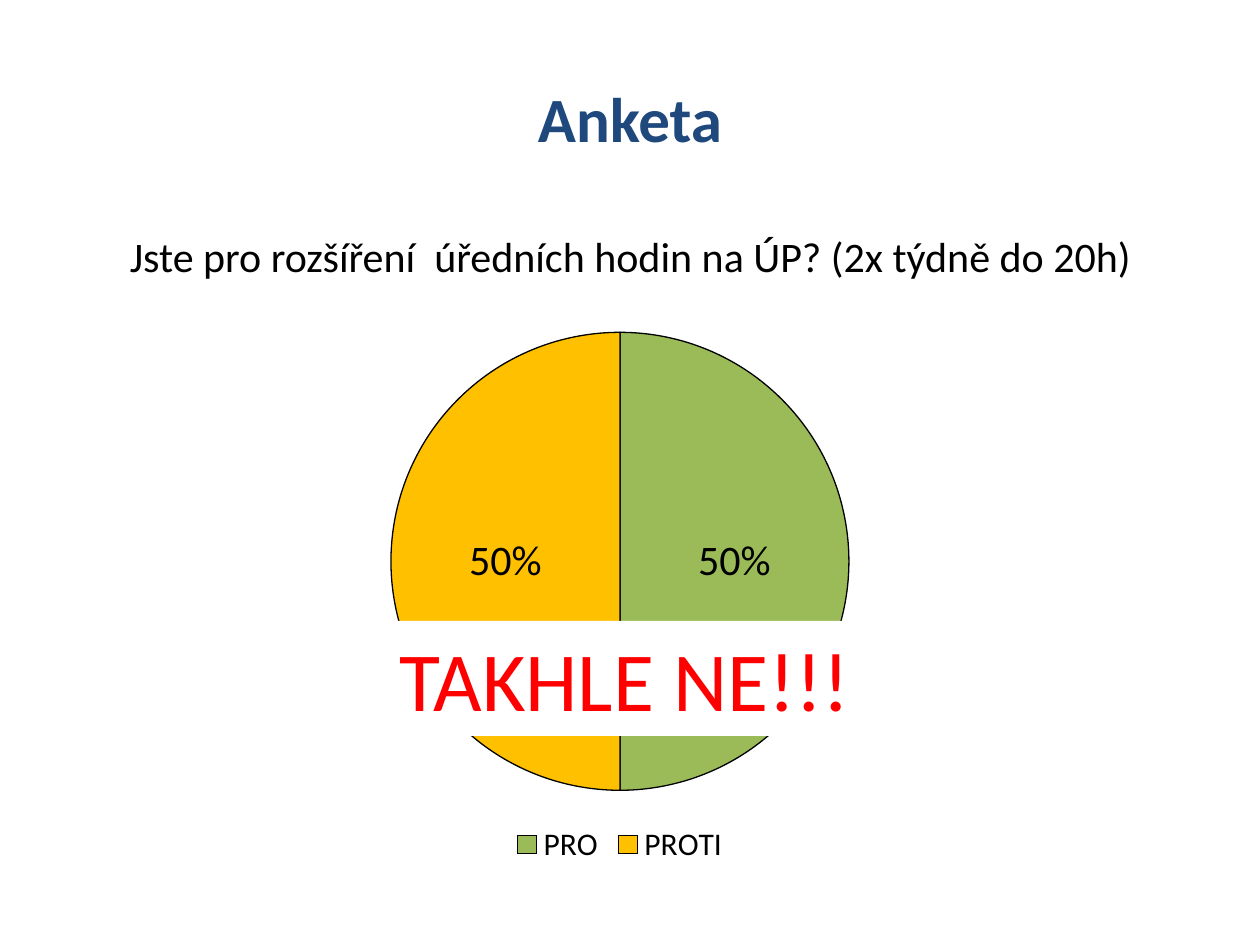
from lxml import etree
from pptx import Presentation
from pptx.chart.data import CategoryChartData
from pptx.dml.color import RGBColor
from pptx.enum.chart import XL_CHART_TYPE, XL_LABEL_POSITION, XL_LEGEND_POSITION
from pptx.enum.shapes import MSO_SHAPE
from pptx.enum.text import MSO_ANCHOR, PP_ALIGN
from pptx.oxml.ns import qn
from pptx.util import Pt

PIE = XL_CHART_TYPE.PIE
LABEL_CENTER = XL_LABEL_POSITION.CENTER
LEGEND_BOTTOM = XL_LEGEND_POSITION.BOTTOM
RECTANGLE = MSO_SHAPE.RECTANGLE
TOP, MIDDLE = MSO_ANCHOR.TOP, MSO_ANCHOR.MIDDLE
CENTER = PP_ALIGN.CENTER

PX_PER_INCH = 126
FONT = "Calibri"
BLACK, WHITE, RED, NAVY = "000000", "FFFFFF", "FF0000", "1F497D"
GREEN, AMBER = "9BBB59", "FFC000"


def emu(px):
    return round(px * 914400 / PX_PER_INCH)


def color(hex_text):
    return RGBColor.from_string(hex_text)


def set_font(font, size, hex_text, bold=False):
    for name, value in {"name": FONT, "size": Pt(size), "bold": bold}.items():
        setattr(font, name, value)
    font.color.rgb = color(hex_text)


class SlideBuilder:
    def __init__(self, slide):
        self.s = slide

    def fill_text(self, sp, text, size, hex_text, bold=False, anchor=TOP):
        tf = sp.text_frame
        for name, value in {"word_wrap": True, "vertical_anchor": anchor}.items():
            setattr(tf, name, value)
        p = tf.paragraphs[0]
        p.alignment = CENTER
        r = p.add_run()
        r.text = text
        set_font(r.font, size, hex_text, bold)

    def title(self, box, text):
        sp = self.s.shapes.title
        for name, px in zip(("left", "top", "width", "height"), box):
            setattr(sp, name, emu(px))
        self.fill_text(sp, text, 36, NAVY, bold=True, anchor=MIDDLE)

    def text(self, box, text):
        sp = self.s.shapes.add_textbox(*map(emu, box))
        self.fill_text(sp, text, 24, BLACK)
        sp.text_frame.paragraphs[0].space_before = Pt(4.8)

    def banner(self, box, text):
        sp = self.s.shapes.add_shape(RECTANGLE, *map(emu, box))
        sp.shadow.inherit = False
        sp.fill.solid()
        sp.fill.fore_color.rgb = color(WHITE)
        sp.line.fill.background()
        self.fill_text(sp, text, 48, RED)

    def pie(self, box, shares, colors, plot):
        """Draw a pie whose plot area is given as fractions of the chart."""
        data = CategoryChartData()
        data.categories = list(shares)
        data.add_series("Series 1", list(shares.values()))
        chart = self.s.shapes.add_chart(PIE, *map(emu, box), data).chart
        chart.has_title = False
        set_font(chart.font, 18, BLACK)
        chart.has_legend = True
        chart.legend.position = LEGEND_BOTTOM
        chart.legend.include_in_layout = False
        set_font(chart.legend.font, 18, BLACK)

        pie = chart.plots[0]
        pie.vary_by_categories = True
        for i, hex_text in enumerate(colors):
            fmt = pie.series[0].points[i].format
            fmt.fill.solid()
            fmt.fill.fore_color.rgb = color(hex_text)
            fmt.line.color.rgb = color(BLACK)
            fmt.line.width = Pt(0.75)
        pie.has_data_labels = True
        labels = pie.data_labels
        for name, value in {"show_percentage": True, "show_value": False,
                            "number_format": "0%", "number_format_is_linked": False,
                            "position": LABEL_CENTER}.items():
            setattr(labels, name, value)
        set_font(labels.font, 24, BLACK)
        self.place_plot(chart, plot)

    def place_plot(self, chart, plot):
        area = chart.element.find(".//" + qn("c:plotArea"))
        layout = area.find(qn("c:layout"))
        if layout is None:
            layout = etree.Element(qn("c:layout"))
            area.insert(0, layout)
        manual = etree.SubElement(layout, qn("c:manualLayout"))
        settings = {"layoutTarget": "inner", "xMode": "edge", "yMode": "edge"}
        settings.update(zip("xywh", map(str, plot)))
        for tag, value in settings.items():
            etree.SubElement(manual, qn("c:" + tag)).set("val", value)


def main():
    prs = Presentation()
    prs.slide_width, prs.slide_height = emu(1260), emu(945)
    page = SlideBuilder(prs.slides.add_slide(prs.slide_layouts[5]))
    page.title((63, 38, 1134, 158), "Anketa")
    page.text((95, 224, 1071, 609),
              "Jste pro rozšíření  úředních hodin na ÚP? (2x týdně do 20h)")
    page.pie((273, 314, 694, 556), {"PRO": 50, "PROTI": 50}, (GREEN, AMBER),
             plot=(0.17, 0.03, 0.66, 0.83))
    page.banner((223, 621, 804, 115), "TAKHLE NE!!!")
    prs.save("out.pptx")


if __name__ == "__main__":
    main()
